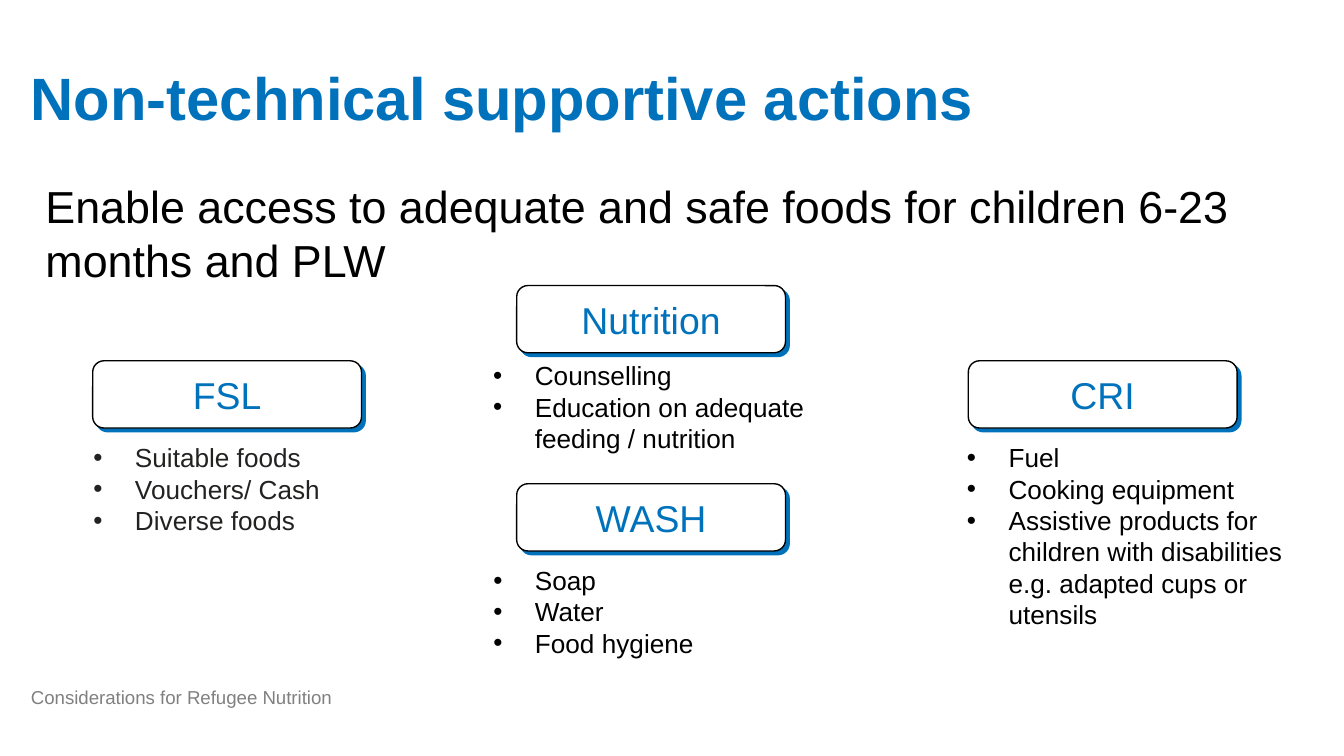
from lxml import etree
from pptx import Presentation
from pptx.dml.color import RGBColor
from pptx.enum.shapes import MSO_SHAPE as Shape
from pptx.enum.text import MSO_ANCHOR as Anchor, PP_ALIGN as Align
from pptx.oxml import parse_xml
from pptx.oxml.ns import nsdecls, qn
from pptx.util import Pt

PX = 4572  # 200 px to the inch
BLUE, BLACK, DARK, GREY, WHITE = "0072BC", "000000", "222221", "808080", "FFFFFF"
SHADOW = f"""<a:effectLst {nsdecls("a")}>
  <a:outerShdw dist="35921" dir="2700000" algn="ctr" rotWithShape="0">
    <a:srgbClr val="{BLUE}"/>
  </a:outerShdw>
</a:effectLst>"""

rgb = RGBColor.from_string


def write(frame, lines, size, color, anchor=Anchor.TOP, pad=(0, 0, 0, 0), bold=False, mark=False):
    """Fill a text frame, one paragraph a line; mark puts a bullet before each."""
    frame.word_wrap = True
    frame.vertical_anchor = anchor
    frame.margin_left, frame.margin_top, frame.margin_right, frame.margin_bottom = [n * PX for n in pad]
    for i, line in enumerate(lines):
        para = frame.add_paragraph() if i else frame.paragraphs[0]
        if mark:
            props = para._p.get_or_add_pPr()
            props.set("marL", str(62 * PX))
            props.set("indent", str(-62 * PX))
            etree.SubElement(props, qn("a:buFont")).set("typeface", "Arial")
            etree.SubElement(props, qn("a:buChar")).set("char", "•")
        run = para.add_run()
        run.text = line
        font = run.font
        font.name, font.size, font.bold = "Arial", Pt(size), bold
        font.color.rgb = rgb(color)


deck = Presentation()
deck.slide_width, deck.slide_height = 2000 * PX, 1125 * PX
slide = deck.slides.add_slide(deck.slide_layouts[6])
shapes = slide.shapes


def box(*place):
    return shapes.add_textbox(*[n * PX for n in place]).text_frame


title = box(46, 44, 1906, 212)
write(title, ["Non-technical supportive actions"], 32, BLUE, Anchor.MIDDLE, bold=True)
title.paragraphs[0].line_spacing = 0.9

write(box(48, 256, 1906, 554),
      ["Enable access to adequate and safe foods for children 6-23 months and PLW"],
      24, BLACK, pad=(20, 10, 20, 0))

write(box(46, 1004, 924, 50), ["Considerations for Refugee Nutrition"], 10, GREY, Anchor.BOTTOM)

# name, card left and top, list place, list colour, actions
groups = [
    ("Nutrition", 769, 425, (734, 535, 528, 142), BLACK,
     ["Counselling", "Education on adequate feeding / nutrition"]),
    ("FSL", 138, 537, (139, 657, 400, 142), DARK,
     ["Suitable foods", "Vouchers/ Cash", "Diverse foods"]),
    ("CRI", 1441, 537, (1439, 657, 528, 282), BLACK,
     ["Fuel", "Cooking equipment",
      "Assistive products for children with disabilities e.g. adapted cups or utensils"]),
    ("WASH", 769, 720, (734, 840, 564, 142), BLACK,
     ["Soap", "Water", "Food hygiene"]),
]
for name, left, top, place, color, actions in groups:
    write(box(*place), actions, 14, color, mark=True)

    card = shapes.add_shape(Shape.ROUNDED_RECTANGLE, left * PX, top * PX, 400 * PX, 100 * PX)
    card.fill.solid()
    card.fill.fore_color.rgb = rgb(WHITE)
    card.line.color.rgb = rgb(BLACK)
    card.line.width = Pt(0.75)
    card._element.spPr.append(parse_xml(SHADOW))
    write(card.text_frame, [name], 20, BLUE, Anchor.MIDDLE, (20, 10, 20, 10))
    card.text_frame.paragraphs[0].alignment = Align.CENTER

deck.save("out.pptx")
